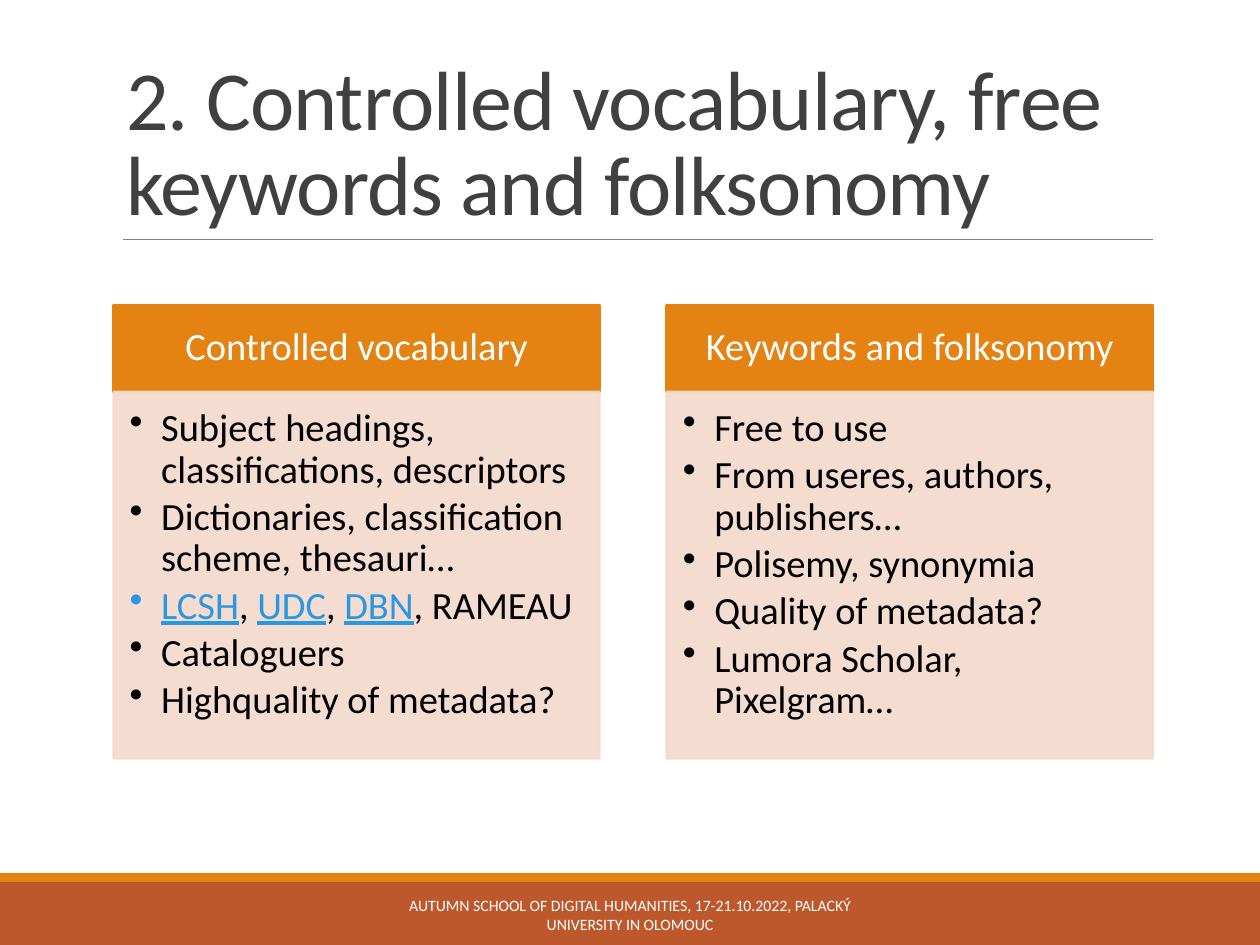
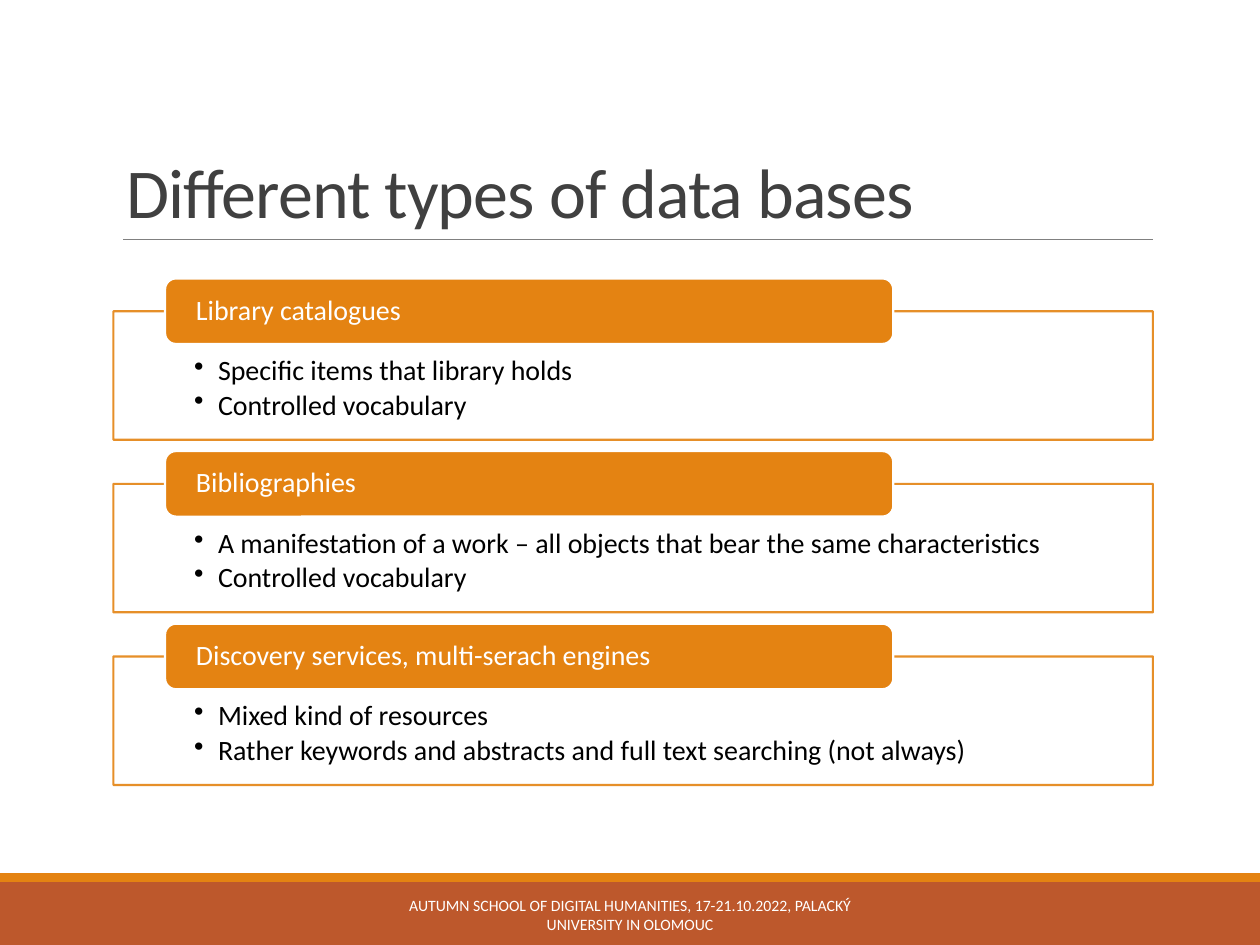
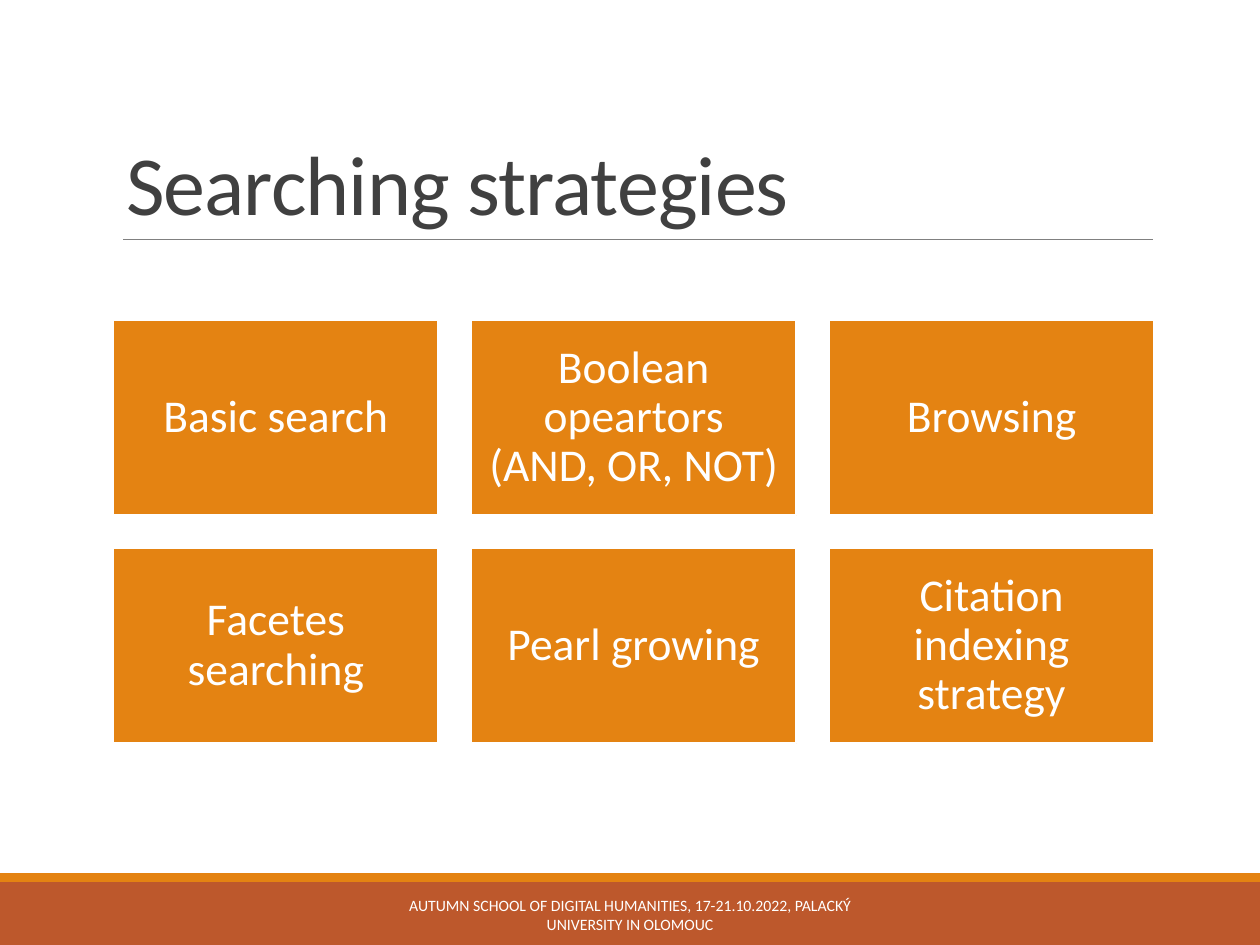
"""Build three slides on vocabularies, databases and searching strategies."""
from dataclasses import dataclass

from lxml import etree
from pptx import Presentation
from pptx import util as u
from pptx.dml.color import RGBColor
from pptx.enum import shapes, text
from pptx.oxml.ns import qn


@dataclass(frozen=True)
class Theme:
    font: str = "Calibri"
    orange: str = "E48312"
    rust: str = "BD582C"
    pale: str = "F5D9CC"
    rule: str = "808080"
    heading: str = "404040"
    link: str = "2998E3"
    white: str = "FFFFFF"
    black: str = "000000"
    title_size: int = 48
    small_title_size: int = 40
    tile_size: int = 26
    column_size: int = 22
    panel_size: int = 16
    footer_size: int = 9


theme = Theme()
LEFT, ALIGN_CENTER = text.PP_ALIGN.LEFT, text.PP_ALIGN.CENTER
TOP, MIDDLE, BOTTOM = text.MSO_ANCHOR.TOP, text.MSO_ANCHOR.MIDDLE, text.MSO_ANCHOR.BOTTOM
RECTANGLE, ROUNDED = shapes.MSO_SHAPE.RECTANGLE, shapes.MSO_SHAPE.ROUNDED_RECTANGLE


def add_box(slide, place, fill, line=None, kind=RECTANGLE, alpha=None):
    shape = slide.shapes.add_shape(kind, *map(u.Inches, place))
    shape.shadow.inherit = False
    shape.fill.solid()
    shape.fill.fore_color.rgb = RGBColor.from_string(fill)
    if line:
        shape.line.color.rgb = RGBColor.from_string(line)
        shape.line.width = u.Pt(1.25)
    else:
        shape.line.fill.background()
    if alpha:
        for color in list(shape.element.spPr.iter(qn("a:srgbClr"))):
            etree.SubElement(color, qn("a:alpha")).set("val", str(alpha * 1000))
    return shape


def write(shape, paragraphs, size, color, align=LEFT, anchor=MIDDLE,
          insets=(0.1, 0.05, 0.1, 0.05), spacing=0.9, hanging=0, tracking=0):
    frame = shape.text_frame
    frame.word_wrap = True
    frame.auto_size = text.MSO_AUTO_SIZE.NONE
    frame.vertical_anchor = anchor
    frame.margin_left, frame.margin_top, frame.margin_right, frame.margin_bottom = map(u.Inches, insets)
    for index, content in enumerate(paragraphs):
        paragraph = frame.add_paragraph() if index else frame.paragraphs[0]
        paragraph.alignment = align
        paragraph.line_spacing = spacing
        if hanging:
            paragraph.space_after = u.Pt(size * 0.15)
            properties = paragraph._p.get_or_add_pPr()
            properties.set("marL", str(u.Inches(hanging)))
            properties.set("indent", str(-u.Inches(hanging)))
            etree.SubElement(properties, qn("a:buChar")).set("char", "•")
        runs = [(content, False)] if isinstance(content, str) else content
        for words, linked in runs:
            run = paragraph.add_run()
            run.text = words
            run.font.name = theme.font
            run.font.size = u.Pt(size)
            run.font.color.rgb = RGBColor.from_string(theme.link if linked else color)
            if linked:
                run.font.underline = True
            if tracking:
                run._r.get_or_add_rPr().set("spc", str(tracking))


presentation = Presentation()
presentation.slide_width, presentation.slide_height = u.Inches(10), u.Inches(7.5)

titles = [
    ("2. Controlled vocabulary, free keywords and folksonomy", theme.title_size),
    ("Different types of data bases", theme.small_title_size),
    ("Searching strategies", theme.title_size),
]
slides = []
for title, size in titles:
    slide = presentation.slides.add_slide(presentation.slide_layouts[5])
    slides.append(slide)
    heading = slide.shapes.title
    heading.left, heading.top, heading.width, heading.height = map(u.Inches, (0.9, 0.31, 8.25, 1.59))
    write(heading, [title], size, theme.heading, anchor=BOTTOM, spacing=0.85, tracking=-50)

    add_box(slide, (0, 7, 10, 0.5), theme.rust)
    add_box(slide, (0, 6.93, 10, 0.07), theme.orange)
    rule = slide.shapes.add_connector(
        shapes.MSO_CONNECTOR.STRAIGHT, *map(u.Inches, (0.98, 1.9, 9.15, 1.9)))
    rule.line.color.rgb = RGBColor.from_string(theme.rule)
    rule.line.width = u.Pt(0.5)
    etree.SubElement(rule.element.spPr, qn("a:effectLst"))

    footer = slide.shapes.add_textbox(*map(u.Inches, (3.02, 7.06, 3.96, 0.4)))
    write(footer, ["AUTUMN SCHOOL OF DIGITAL HUMANITIES, 17-21.10.2022, PALACKÝ UNIVERSITY IN OLOMOUC"],
          theme.footer_size, theme.white, ALIGN_CENTER, spacing=1.0)

vocabulary_slide, database_slide, strategy_slide = slides

columns = [
    ("Controlled vocabulary", [
        "Subject headings, classifications, descriptors",
        "Dictionaries, classification scheme, thesauri…",
        [("LCSH", True), (", ", False), ("UDC", True), (", ", False), ("DBN", True), (", RAMEAU", False)],
        "Cataloguers",
        "Highquality of metadata?",
    ]),
    ("Keywords and folksonomy", [
        "Free to use",
        "From useres, authors, publishers…",
        "Polisemy, synonymia",
        "Quality of metadata?",
        "Lumora Scholar, Pixelgram…",
    ]),
]
for index, (label, points) in enumerate(columns):
    left = 0.9 + index * 4.39
    header = add_box(vocabulary_slide, (left, 2.42, 3.86, 0.69), theme.orange, theme.orange)
    write(header, [label], theme.column_size, theme.white, ALIGN_CENTER, insets=(0.17, 0.1, 0.17, 0.1))
    body = add_box(vocabulary_slide, (left, 3.11, 3.86, 2.91), theme.pale, theme.pale, alpha=90)
    write(body, points, theme.column_size, theme.black, anchor=TOP,
          insets=(0.13, 0.13, 0.17, 0.19), hanging=0.25)

databases = [
    ("Library catalogues", ["Specific items that library holds", "Controlled vocabulary"]),
    ("Bibliographies", ["A manifestation of a work – all objects that bear the same characteristics",
                        "Controlled vocabulary"]),
    ("Discovery services, multi-serach engines", [
        "Mixed kind of resources",
        "Rather keywords and abstracts and full text searching (not always)"]),
]
for index, (label, points) in enumerate(databases):
    top = 2.21 + index * 1.37
    panel = add_box(database_slide, (0.9, top + 0.26, 8.25, 1.02), theme.white, theme.orange, alpha=90)
    write(panel, points, theme.panel_size, theme.black, anchor=TOP,
          insets=(0.64, 0.36, 0.64, 0.12), hanging=0.19)
    tab = add_box(database_slide, (1.31, top, 5.78, 0.52), theme.orange, theme.white, ROUNDED)
    write(tab, [label], theme.panel_size, theme.white, insets=(0.22, 0, 0.22, 0))

strategies = ["Basic search", "Boolean opeartors (AND, OR, NOT)", "Browsing",
              "Facetes searching", "Pearl growing", "Citation indexing strategy"]
for index, strategy in enumerate(strategies):
    row, column = divmod(index, 3)
    tile = add_box(strategy_slide, (0.9 + column * 2.84, 2.54 + row * 1.81, 2.58, 1.55),
                   theme.orange, theme.white)
    write(tile, [strategy], theme.tile_size, theme.white, ALIGN_CENTER, insets=(0.11,) * 4)

presentation.save("out.pptx")
